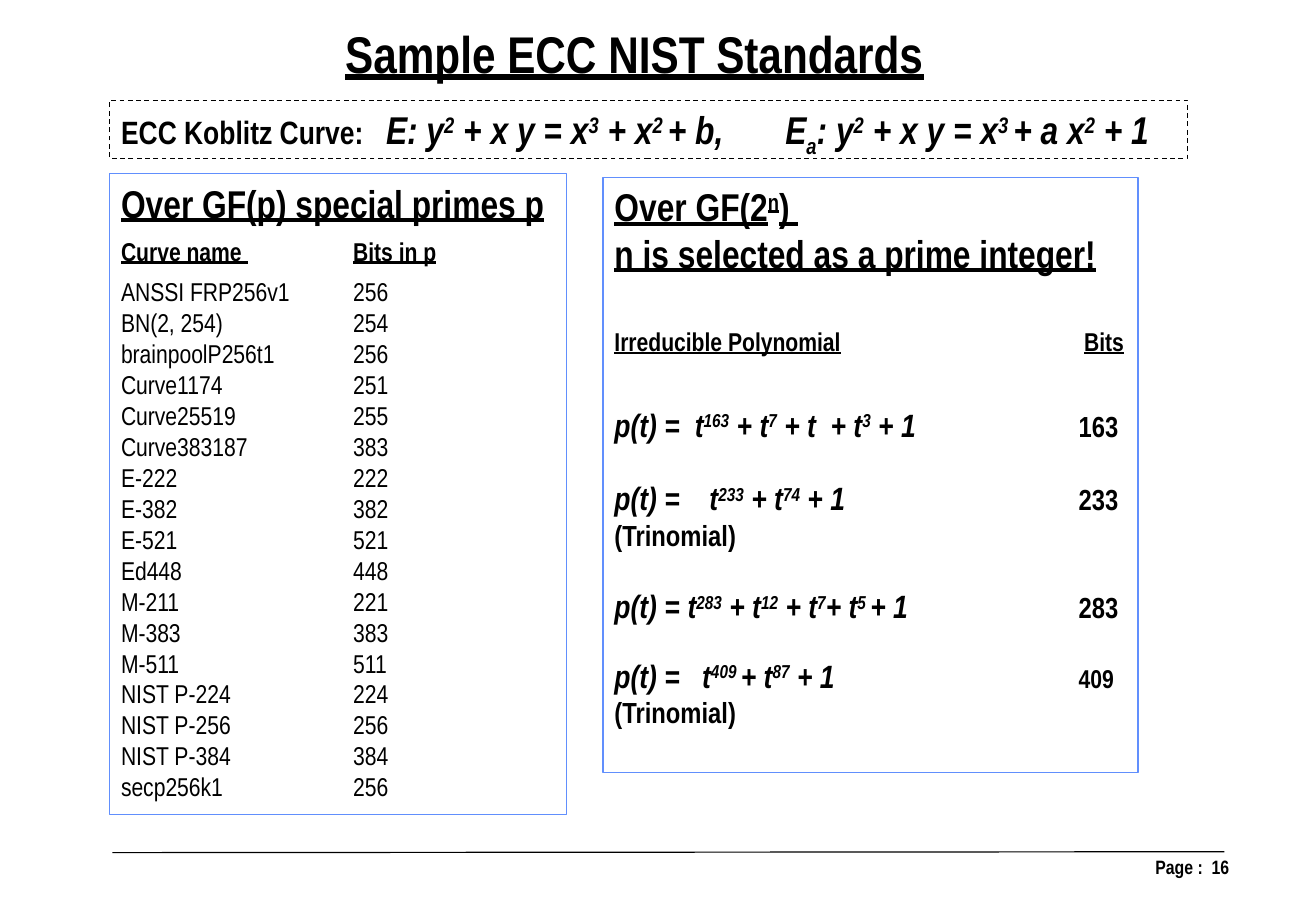
from dataclasses import dataclass, field
from typing import Any

from lxml.etree import SubElement
from pptx import Presentation
from pptx.dml.color import RGBColor
from pptx.enum.dml import MSO_LINE
from pptx.enum.shapes import MSO_CONNECTOR, MSO_SHAPE
from pptx.enum.text import MSO_ANCHOR, MSO_AUTO_SIZE, PP_ALIGN
from pptx.oxml.ns import qn
from pptx.util import Cm, Pt

COLORS = {"ink": "000000", "frame": "618FFD"}
FONT = "Arial Narrow"

# Character formats
TITLE = {"size": Pt(32), "bold": True, "underline": True}
HEADING = {**TITLE, "size": Pt(24)}
LABEL = {**TITLE, "size": Pt(16)}
BODY = {"size": Pt(16)}
LEAD = {"size": Pt(20), "bold": True}
CURVE = {"size": Pt(24), "bold": True, "italic": True}
POLY = {**CURVE, "size": Pt(20)}
BITS = {"size": Pt(18), "bold": True}
SMALL_BITS = {**BITS, "size": Pt(16)}
PAGE = {**BITS, "size": Pt(12)}


@dataclass
class Run:
    """Pieces between bars are superscript, or subscript after an underscore."""
    text: str
    fmt: dict[str, Any]


@dataclass
class Para:
    runs: list[Run]
    before: float = 0
    after: float = 0
    tabs: list[float] = field(default_factory=list)
    align: PP_ALIGN = PP_ALIGN.LEFT


@dataclass
class Panel:
    box: tuple[float, float, float, float]
    color: str
    paras: list[Para]
    dashed: bool = False


@dataclass
class Polynomial:
    text: str
    start: float
    bits: str
    before: float
    fmt: dict[str, Any] = field(default_factory=lambda: BITS)


def rgb(name: str) -> RGBColor:
    return RGBColor.from_string(COLORS[name])


def add_run(p, text: str, fmt: dict[str, Any], baseline: int = 0) -> None:
    for i, line in enumerate(text.split("\n")):
        if i:
            p.add_line_break()
        r = p.add_run()
        r.text = line
        for name, value in {"name": FONT, **fmt}.items():
            setattr(r.font, name, value)
        r.font.color.rgb = rgb("ink")
        if baseline:
            r.font._element.set("baseline", str(baseline * 1000))


def write(tf, paras: list[Para], anchor: MSO_ANCHOR = MSO_ANCHOR.TOP) -> None:
    frame = {"word_wrap": True, "auto_size": MSO_AUTO_SIZE.NONE, "vertical_anchor": anchor}
    for name, value in frame.items():
        setattr(tf, name, value)
    for i, para in enumerate(paras):
        p = tf.add_paragraph() if i else tf.paragraphs[0]
        layout = {"alignment": para.align, "space_before": Pt(para.before),
                  "space_after": Pt(para.after)}
        for name, value in layout.items():
            setattr(p, name, value)
        if para.tabs:
            tabs = SubElement(p._p.get_or_add_pPr(), qn("a:tabLst"))
            for pos in para.tabs:
                SubElement(tabs, qn("a:tab"), pos=str(Cm(pos)), algn="l")
        for run in para.runs:
            for n, piece in enumerate(run.text.split("|")):
                shift = (-25 if piece.startswith("_") else 30) if n % 2 else 0
                add_run(p, piece.removeprefix("_"), run.fmt, shift)


def add_panel(slide, panel: Panel) -> None:
    sp = slide.shapes.add_shape(MSO_SHAPE.RECTANGLE, *map(Cm, panel.box))
    sp.shadow.inherit = False
    sp.fill.background()
    sp.line.color.rgb = rgb(panel.color)
    sp.line.width = Pt(0.75)
    if panel.dashed:
        sp.line.dash_style = MSO_LINE.DASH
    write(sp.text_frame, panel.paras)


def polynomial_para(row: Polynomial) -> Para:
    runs = [Run("p(t) =\t" + row.text, POLY), Run("\t" + row.bits, row.fmt)]
    return Para(runs, before=row.before, tabs=[row.start, 10.16])


PRIME_CURVES = [
    ("ANSSI FRP256v1", 256), ("BN(2, 254)", 254), ("brainpoolP256t1", 256),
    ("Curve1174", 251), ("Curve25519", 255), ("Curve383187", 383),
    ("E-222", 222), ("E-382", 382), ("E-521", 521), ("Ed448", 448),
    ("M-211", 221), ("M-383", 383), ("M-511", 511), ("NIST P-224", 224),
    ("NIST P-256", 256), ("NIST P-384", 384), ("secp256k1", 256),
]

POLYNOMIALS = [
    Polynomial("t|163| + t|7| + t  + t|3| + 1", 1.76, "163", 24),
    Polynomial("t|233| + t|74| + 1", 2.08, "233\n(Trinomial)", 21.5),
    Polynomial("t|283| + t|12| + t|7|+ t|5 |+ 1", 1.6, "283", 21.5),
    Polynomial("t|409 |+ t|87| + 1", 1.92, "409", 19, SMALL_BITS),
]

PANELS = [
    # Prime fields
    Panel((2.4, 3.8, 10.01, 14.02), "frame", [
        Para([Run("Over GF(p) special primes p", HEADING)], after=6),
        Para([Run("Curve name ", LABEL), Run("\t", BODY), Run("Bits in p", LABEL)],
             after=6, tabs=[5.08]),
        *[Para([Run(f"{name}\t{bits}", BODY)], tabs=[5.08]) for name, bits in PRIME_CURVES],
    ]),
    # Binary fields
    Panel((13.2, 3.88, 11.71, 13.03), "frame", [
        Para([Run("Over GF(2|n|) \nn is selected as a prime integer!", HEADING)], after=6),
        Para([Run("Irreducible Polynomial", LABEL), Run("\t", BODY), Run("Bits", LABEL)],
             before=25, after=6, tabs=[10.28]),
        *[polynomial_para(row) for row in POLYNOMIALS],
        Para([Run("(Trinomial)", BITS)]),
    ]),
    # Koblitz curve equations
    Panel((2.4, 2.2, 23.6, 1.27), "ink", [
        Para([Run("ECC Koblitz Curve:\t", LEAD),
              Run("E: y|2| + x y = x|3| + x|2 |+ b,\t"
                  "E|_a|: y|2| + x y = x|3 |+ a x|2| + 1", CURVE)], tabs=[5.8, 14.54]),
    ], dashed=True),
]


def main() -> None:
    prs = Presentation()
    prs.slide_width, prs.slide_height = Pt(816.5), Pt(567)
    slide = prs.slides.add_slide(prs.slide_layouts[5])

    # Title
    title = slide.shapes.title
    title.left, title.top, title.width, title.height = map(Cm, (1.39, 0.35, 25, 1.63))
    write(title.text_frame,
          [Para([Run("Sample ECC NIST Standards", TITLE)], align=PP_ALIGN.CENTER)],
          MSO_ANCHOR.MIDDLE)

    for panel in PANELS:
        add_panel(slide, panel)

    # Footer rule and page number
    rule = slide.shapes.add_connector(MSO_CONNECTOR.STRAIGHT, *map(Cm, (2.46, 18.66, 26.8, 18.64)))
    rule.line.color.rgb = rgb("ink")
    rule.line.width = Pt(0.75)
    SubElement(rule._element.spPr, qn("a:effectLst"))
    tf = slide.shapes.add_textbox(*map(Cm, (20.66, 18.57, 6.55, 1.32))).text_frame
    margins = {"margin_left": 0.3, "margin_top": 0.15, "margin_right": 0.3, "margin_bottom": 0.15}
    for name, value in margins.items():
        setattr(tf, name, Cm(value))
    write(tf, [Para([Run("Page :  16", PAGE)], align=PP_ALIGN.RIGHT)])

    prs.save("out.pptx")


if __name__ == "__main__":
    main()
